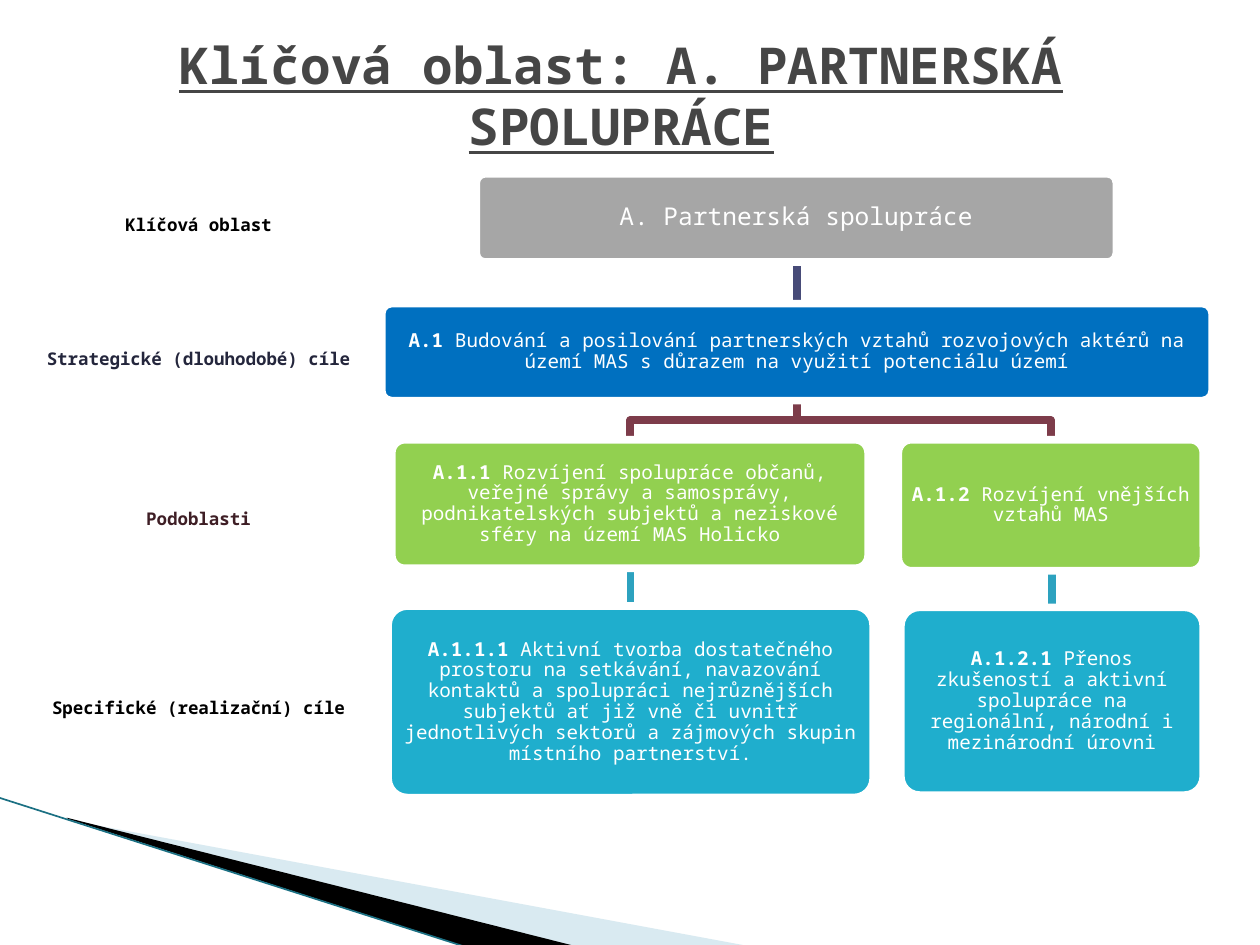
from pptx import Presentation
from pptx.dml.color import RGBColor
from pptx.enum.shapes import MSO_CONNECTOR, MSO_SHAPE
from pptx.enum.text import MSO_ANCHOR, PP_ALIGN
from pptx.oxml.ns import qn
from pptx.util import Inches, Pt
from lxml.etree import SubElement

FONT = "Noto Sans Mono"
WHITE = RGBColor(0xFF, 0xFF, 0xFF)
BLACK = RGBColor(0, 0, 0)
TITLE_GREY = RGBColor(0x46, 0x46, 0x46)
NAVY = RGBColor(0x24, 0x26, 0x3C)
MAROON = RGBColor(0x3E, 0x1E, 0x25)
GREY = RGBColor(0xA6, 0xA6, 0xA6)
BLUE = RGBColor(0x00, 0x70, 0xC0)
GREEN = RGBColor(0x92, 0xD0, 0x50)
CYAN = RGBColor(0x1F, 0xAE, 0xCD)
INDIGO_LINK = RGBColor(0x47, 0x4B, 0x78)
WINE_LINK = RGBColor(0x7D, 0x3C, 0x4A)
TEAL_LINK = RGBColor(0x2D, 0xA2, 0xBF)
PALE_BLUE = RGBColor(0xA0, 0xCB, 0xDC)
EDGE_TEAL = RGBColor(0x1B, 0x70, 0x83)
LINK_WIDTH = 4.33

TITLE = "Klíčová oblast: A. PARTNERSKÁ SPOLUPRÁCE"

# label, top, height, colour
LEVELS = [
    ("Klíčová oblast", 1.35, 0.88, BLACK),
    ("Strategické (dlouhodobé) cíle", 2.2, 1.31, NAVY),
    ("Podoblasti", 3.43, 1.4, MAROON),
    ("Specifické (realizační) cíle", 4.85, 1.55, BLACK),
]
LABEL_LEFT, LABEL_WIDTH = 0.12, 2.91

# key: (number, wording, (left, top, width, height), fill, text size)
GOALS = {
    "A": ("", "A. Partnerská spolupráce", (3.78, 1.38, 5.08, 0.7), GREY, 14),
    "A.1": ("A.1", " Budování a posilování partnerských vztahů rozvojových aktérů na "
            "území MAS s\u00a0důrazem na využití potenciálu území",
            (3.03, 2.41, 6.59, 0.77), BLUE, 11),
    "A.1.1": ("A.1.1", " Rozvíjení spolupráce občanů, veřejné správy a samosprávy, "
              "podnikatelských subjektů a neziskové sféry na území MAS Holicko",
              (3.11, 3.49, 3.78, 1.02), GREEN, 11),
    "A.1.2": ("A.1.2", " Rozvíjení vnějších vztahů MAS",
              (7.13, 3.49, 2.42, 1.04), GREEN, 11),
    "A.1.1.1": ("A.1.1.1", " Aktivní tvorba dostatečného prostoru na setkávání, navazování "
                "kontaktů a spolupráci nejrůznějších subjektů ať již vně či uvnitř "
                "jednotlivých sektorů a zájmových skupin místního partnerství.",
                (3.08, 4.81, 3.85, 1.52), CYAN, 11),
    "A.1.2.1": ("A.1.2.1", " Přenos zkušeností a aktivní spolupráce na regionální, "
                "národní i mezinárodní úrovni",
                (7.15, 4.82, 2.4, 1.49), CYAN, 11),
}
LINKS = [
    ("A", "A.1", INDIGO_LINK),
    ("A.1", "A.1.1", WINE_LINK),
    ("A.1", "A.1.2", WINE_LINK),
    ("A.1.1", "A.1.1.1", TEAL_LINK),
    ("A.1.2", "A.1.2.1", TEAL_LINK),
]

# points, fill, opacity in percent
WEDGES = [
    ([(0.55, 6.51), (5.95, 7.51), (4.56, 7.51), (0.55, 6.5)], PALE_BLUE, 40),
    ([(0.53, 6.49), (4.57, 7.51), (3.72, 7.52), (0.54, 6.5)], BLACK, 100),
]
WEDGE_EDGE = [(-0.01, 6.33), (3.71, 7.52)]


def add_polyline(slide, points, close):
    (x, y), *rest = [(Inches(px), Inches(py)) for px, py in points]
    builder = slide.shapes.build_freeform(x, y)
    builder.add_line_segments(rest, close=close)
    outline = builder.convert_to_shape()
    outline.shadow.inherit = False
    return outline


def add_line(slide, start, end, color, width):
    line = slide.shapes.add_connector(MSO_CONNECTOR.STRAIGHT,
                                      *(Inches(v) for v in (*start, *end)))
    line.line.color.rgb = color
    line.line.width = Pt(width)
    SubElement(line._element.spPr, qn("a:effectLst"))


def write(shape, parts, size, color, inset, spacing=0.9):
    """Fill a shape with one centred paragraph of (wording, bold) parts."""
    frame = shape.text_frame
    frame.word_wrap = True
    frame.vertical_anchor = MSO_ANCHOR.MIDDLE
    frame.margin_left = frame.margin_right = Inches(inset)
    frame.margin_top = frame.margin_bottom = Inches(inset)
    paragraph = frame.paragraphs[0]
    paragraph.alignment = PP_ALIGN.CENTER
    paragraph.line_spacing = spacing
    for wording, bold in parts:
        if wording:
            run = paragraph.add_run()
            run.text = wording
            run.font.name = FONT
            run.font.size = Pt(size)
            run.font.bold = bold
            run.font.color.rgb = color
    return paragraph


def add_link(slide, parent, child, color):
    """Join the bottom of the parent box to the top of the child box."""
    left, top, width, height = GOALS[parent][2]
    start_x, start_y = left + width / 2, top + height
    left, end_y, width, _ = GOALS[child][2]
    end_x = left + width / 2
    if abs(end_x - start_x) < 0.05:
        add_line(slide, (end_x, start_y), (end_x, end_y), color, LINK_WIDTH)
        return
    middle = (start_y + end_y) / 2
    elbow = add_polyline(slide, [(start_x, start_y), (start_x, middle),
                                 (end_x, middle), (end_x, end_y)], close=False)
    elbow.fill.background()
    elbow.line.color.rgb = color
    elbow.line.width = Pt(LINK_WIDTH)


def add_goal(slide, number, wording, place, fill, size):
    box = slide.shapes.add_shape(MSO_SHAPE.ROUNDED_RECTANGLE, *map(Inches, place))
    box.adjustments[0] = 0.1
    box.shadow.inherit = False
    box.fill.solid()
    box.fill.fore_color.rgb = fill
    box.line.color.rgb = WHITE
    box.line.width = Pt(LINK_WIDTH)
    write(box, [(number, True), (wording, False)], size, WHITE, 0.07)


def main():
    deck = Presentation()
    deck.slide_width, deck.slide_height = Inches(10), Inches(7.5)
    slide = deck.slides.add_slide(deck.slide_layouts[6])

    for points, color, opacity in WEDGES:
        wedge = add_polyline(slide, points, close=True)
        wedge.fill.solid()
        wedge.fill.fore_color.rgb = color
        wedge.line.fill.background()
        if opacity < 100:
            tint = wedge._element.spPr.find(qn("a:solidFill"))[0]
            SubElement(tint, qn("a:alpha"), val=str(opacity * 1000))
    add_line(slide, *WEDGE_EDGE, EDGE_TEAL, 0.95)

    title = slide.shapes.add_textbox(*map(Inches, (0.43, 0.13, 9, 1.25)))
    heading = write(title, [(TITLE, True)], 29, TITLE_GREY, 0.1, spacing=1.0)
    heading.runs[0].font.underline = True

    for label, top, height, color in LEVELS:
        level = slide.shapes.add_textbox(
            *map(Inches, (LABEL_LEFT, top, LABEL_WIDTH, height)))
        write(level, [(label, True)], 10, color, 0.08)

    for parent, child, color in LINKS:
        add_link(slide, parent, child, color)
    for goal in GOALS.values():
        add_goal(slide, *goal)

    deck.save("out.pptx")


if __name__ == "__main__":
    main()
